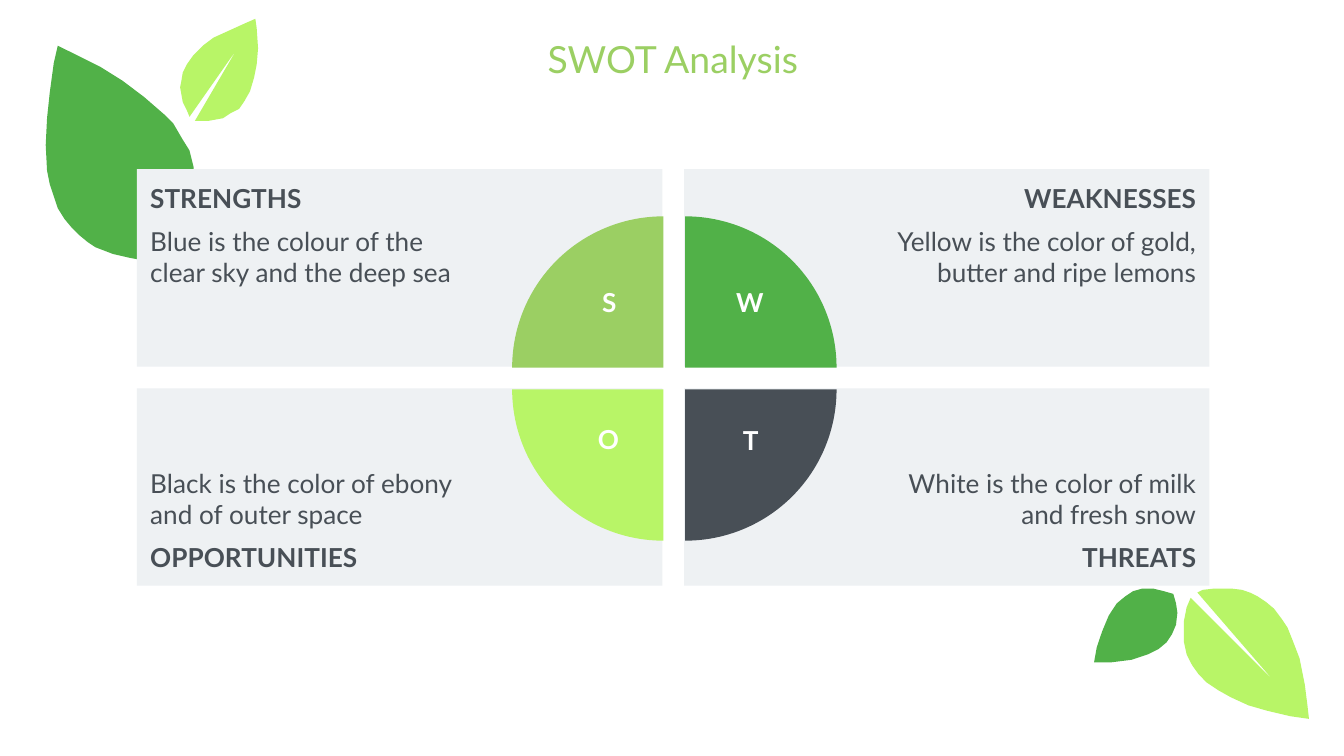
import pptx
import pptx.dml.color
import pptx.enum.shapes
import pptx.enum.text
import pptx.util

Cm = pptx.util.Cm
Pt = pptx.util.Pt
ALIGN = pptx.enum.text.PP_ALIGN
ANCHOR = pptx.enum.text.MSO_ANCHOR
SHAPE = pptx.enum.shapes.MSO_SHAPE

LIME, GREEN, OLIVE = "B8F567", "51B148", "9BCF63"
SLATE, PALE, WHITE = "484F56", "EEF1F3", "FFFFFF"

LEAF_UNIT = Cm(2.54) / 100
LEAVES = [
    (LIME, [
        (954, 461), (948, 453), (942, 448), (936, 444), (930, 441),
        (924, 439), (916, 438), (904, 438), (895, 439), (891, 441),
        (948, 507), (886, 445), (883, 452), (881, 462), (881, 478),
        (883, 487), (887, 495), (892, 502), (898, 508), (907, 514),
        (916, 519), (929, 525), (943, 529), (960, 533), (974, 535),
        (973, 526), (971, 510), (967, 490), (962, 477), (958, 467)]),
    (GREEN, [
        (873, 442), (866, 440), (858, 438), (850, 438), (843, 440),
        (837, 444), (831, 449), (825, 458), (820, 470), (816, 482),
        (814, 493), (826, 493), (842, 491), (854, 487), (862, 483),
        (868, 478), (872, 472), (875, 465), (876, 456), (875, 449)]),
    (LIME, [
        (134, 65), (136, 76), (139, 82), (141, 87), (176, 37), (145, 90),
        (155, 90), (166, 88), (172, 84), (178, 81), (182, 75), (186, 68),
        (189, 58), (191, 48), (192, 36), (191, 21), (190, 14), (181, 18),
        (170, 23), (159, 28), (151, 34), (144, 41), (139, 48), (136, 54),
        (135, 60)]),
    (GREEN, [
        (122, 194), (130, 183), (136, 173), (141, 161), (144, 148),
        (145, 136), (144, 124), (141, 112), (136, 104), (129, 92),
        (122, 85), (107, 72), (91, 60), (75, 50), (55, 40), (43, 34),
        (40, 47), (37, 69), (35, 88), (34, 108), (35, 127), (37, 137),
        (40, 146), (43, 155), (48, 163), (53, 169), (59, 175),
        (65, 180), (71, 184), (84, 189), (97, 192), (108, 194)]),
]

PANEL_LEFT, PANEL_TOP = 2.59, 3.2
PANEL_WIDTH, PANEL_HEIGHT = 9.93, 3.73
COLUMN_STEP, ROW_STEP = 10.34, 4.14
PIE_LEFT, PIE_TOP, PIE_SIZE, PIE_GAP = 9.68, 4.09, 5.72, 0.41
EDGE_INSET, PIE_INSET = 0.25, 3.81

QUADRANTS = [
    (0, 0, "STRENGTHS", "Blue is the colour of the clear sky and the deep sea"),
    (1, 0, "WEAKNESSES", "Yellow is the color of gold, butter and ripe lemons"),
    (0, 1, "OPPORTUNITIES", "Black is the color of ebony and of outer space"),
    (1, 1, "THREATS", "White is the color of milk and fresh snow"),
]
PIES = [(0, 0, OLIVE), (1, 0, GREEN), (1, 1, SLATE), (0, 1, LIME)]
LETTERS = [
    ("S", 11.13, 5.28, 0.69),
    ("W", 13.54, 5.28, 1.27),
    ("O", 11.05, 7.87, 0.69),
    ("T", 13.79, 7.9, 0.74),
]


def color(value):
    return pptx.dml.color.RGBColor.from_string(value)


def paint(shape, fill):
    shape.shadow.inherit = False
    shape.fill.solid()
    shape.fill.fore_color.rgb = color(fill)
    shape.line.fill.background()


def write(para, text, size=14, fill=SLATE, bold=False, align=ALIGN.LEFT,
          before=0, after=0):
    para.alignment = align
    para.space_before = Pt(before)
    para.space_after = Pt(after)
    span = para.add_run()
    span.text = text
    span.font.name = "Lato"
    span.font.size = Pt(size)
    span.font.bold = bold
    span.font.color.rgb = color(fill)


def add_leaf(page, fill, points):
    builder = page.shapes.build_freeform(*points[0], scale=LEAF_UNIT)
    builder.add_line_segments(points[1:], close=True)
    paint(builder.convert_to_shape(), fill)


def add_panel(page, column, row, heading, body):
    box = page.shapes.add_shape(
        SHAPE.RECTANGLE,
        Cm(PANEL_LEFT + column * COLUMN_STEP), Cm(PANEL_TOP + row * ROW_STEP),
        Cm(PANEL_WIDTH), Cm(PANEL_HEIGHT))
    paint(box, PALE)
    frame = box.text_frame
    frame.word_wrap = True
    frame.vertical_anchor = ANCHOR.BOTTOM if row else ANCHOR.TOP
    frame.margin_top = frame.margin_bottom = Cm(EDGE_INSET)
    frame.margin_left = Cm(PIE_INSET if column else EDGE_INSET)
    frame.margin_right = Cm(EDGE_INSET if column else PIE_INSET)
    align = ALIGN.RIGHT if column else ALIGN.LEFT
    lines = [(heading, True), (body, False)]
    if row:
        lines.reverse()
    first, second = lines
    write(frame.paragraphs[0], first[0], bold=first[1], align=align)
    write(frame.add_paragraph(), second[0], bold=second[1], align=align,
          before=6, after=6)


def add_pie(page, column, row, fill, rotation):
    pie = page.shapes.add_shape(
        SHAPE.PIE,
        Cm(PIE_LEFT + column * PIE_GAP), Cm(PIE_TOP + row * PIE_GAP),
        Cm(PIE_SIZE), Cm(PIE_SIZE))
    pie.adjustments[0] = 108
    pie.adjustments[1] = 162
    pie.rotation = rotation
    paint(pie, fill)


def add_label(page, text, left, top, width, height, wrap=False,
              anchor=ANCHOR.TOP, inset=0.13, **style):
    box = page.shapes.add_textbox(Cm(left), Cm(top), Cm(width), Cm(height))
    frame = box.text_frame
    frame.word_wrap = wrap
    frame.vertical_anchor = anchor
    frame.margin_top = frame.margin_bottom = Cm(inset)
    write(frame.paragraphs[0], text, align=ALIGN.CENTER, **style)


def main():
    deck = pptx.Presentation()
    deck.slide_width = Cm(25.4)
    deck.slide_height = Cm(14.29)
    page = deck.slides.add_slide(deck.slide_layouts[6])
    for fill, points in LEAVES:
        add_leaf(page, fill, points)
    for quadrant in QUADRANTS:
        add_panel(page, *quadrant)
    for turn, (column, row, fill) in enumerate(PIES):
        add_pie(page, column, row, fill, turn * 90)
    for letter, left, top, width in LETTERS:
        add_label(page, letter, left, top, width, 1.07, fill=WHITE, bold=True)
    add_label(page, "SWOT Analysis", 2.39, 0.69, 20.65, 1.09, wrap=True,
              anchor=ANCHOR.BOTTOM, inset=0.25, size=20, fill=OLIVE)
    deck.save("out.pptx")


if __name__ == "__main__":
    main()
